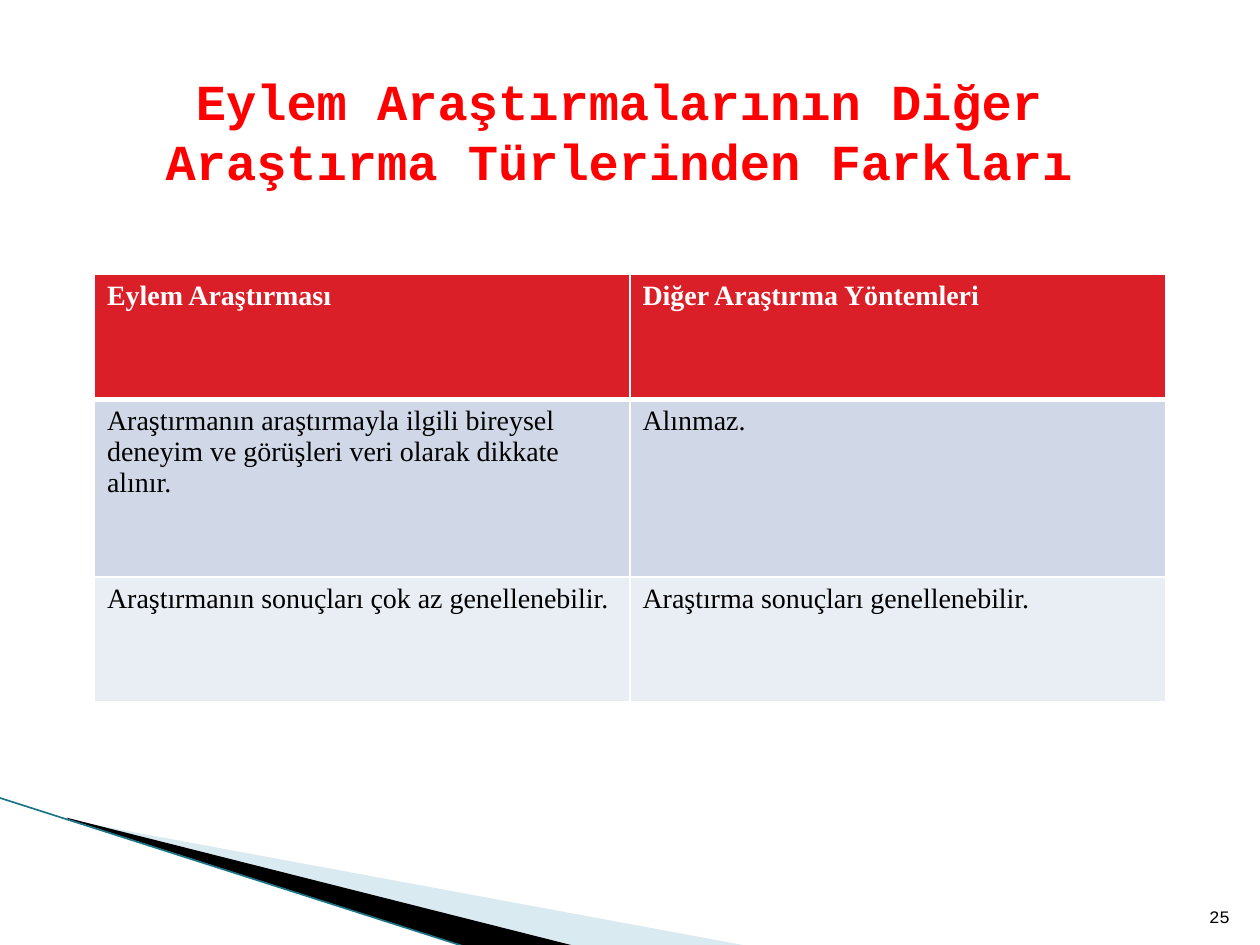
from lxml.etree import SubElement
from pptx import Presentation
from pptx.dml.color import RGBColor
from pptx.enum.shapes import MSO_CONNECTOR
from pptx.enum.text import MSO_ANCHOR, PP_ALIGN
from pptx.oxml import parse_xml
from pptx.oxml.ns import nsdecls, qn
from pptx.util import Inches, Pt

WHITE = RGBColor(0xFF, 0xFF, 0xFF)
BLACK = RGBColor(0, 0, 0)
RED = RGBColor(0xFF, 0, 0)
HEADER_RED = RGBColor(0xDA, 0x1F, 0x28)
BAND_DARK = RGBColor(0xD0, 0xD8, 0xE8)
BAND_LIGHT = RGBColor(0xE9, 0xED, 0xF4)
PALE_BLUE = RGBColor(0xA0, 0xCB, 0xDC)
TEAL = RGBColor(0x1B, 0x75, 0x87)

ROWS = [
    ("Eylem Araştırması", "Diğer Araştırma Yöntemleri"),
    ("Araştırmanın araştırmayla ilgili bireysel deneyim ve görüşleri "
     "veri olarak dikkate alınır.", "Alınmaz."),
    ("Araştırmanın sonuçları çok az genellenebilir.",
     "Araştırma sonuçları genellenebilir."),
]


class SlideBuilder:
    heading_font = "Courier New"
    table_font = "Times New Roman"

    def __init__(self, prs):
        self.s = prs.slides.add_slide(prs.slide_layouts[5])

    def set_text(self, tf, text, font, size, color, bold=False, align=PP_ALIGN.LEFT):
        tf.text = text
        p = tf.paragraphs[0]
        p.alignment = align
        f = p.runs[0].font
        f.name, f.size, f.bold = font, Pt(size), bold
        f.color.rgb = color

    def place(self, sp, left, top, width, height):
        sp.left, sp.top = Inches(left), Inches(top)
        sp.width, sp.height = Inches(width), Inches(height)

    def wedge(self, points, color, opacity=100):
        start, *rest = [(Inches(x), Inches(y)) for x, y in points]
        fb = self.s.shapes.build_freeform(*start)
        fb.add_line_segments(rest, close=True)
        sp = fb.convert_to_shape()
        sp.shadow.inherit = False
        sp.line.fill.background()
        sp.fill.solid()
        sp.fill.fore_color.rgb = color
        if opacity < 100:
            clr = sp._element.spPr.find(qn("a:solidFill") + "/" + qn("a:srgbClr"))
            SubElement(clr, qn("a:alpha"), val=str(opacity * 1000))

    def line(self, x1, y1, x2, y2, color, width):
        c = self.s.shapes.add_connector(
            MSO_CONNECTOR.STRAIGHT, Inches(x1), Inches(y1), Inches(x2), Inches(y2))
        c.line.color.rgb = color
        c.line.width = Pt(width)
        SubElement(c._element.spPr, qn("a:effectLst"))

    def title(self, text, *box):
        sp = self.s.shapes.title
        self.place(sp, *box)
        tf = sp.text_frame
        tf.word_wrap = True
        tf.vertical_anchor = MSO_ANCHOR.MIDDLE
        self.set_text(tf, text, self.heading_font, 28.8, RED, True, PP_ALIGN.CENTER)

    def page_number(self, text, *box):
        sp = self.s.shapes.add_textbox(*map(Inches, box))
        tf = sp.text_frame
        tf.word_wrap = True
        tf.vertical_anchor = MSO_ANCHOR.BOTTOM
        self.set_text(tf, text, self.heading_font, 10, BLACK, align=PP_ALIGN.RIGHT)

    def borders(self, cell, top, bottom):
        tcPr = cell._tc.get_or_add_tcPr()
        widths = {"L": 1, "R": 1, "T": top, "B": bottom}
        for i, (side, width) in enumerate(widths.items()):
            tcPr.insert(i, parse_xml(
                f'<a:ln{side} {nsdecls("a")} w="{Pt(width)}"><a:solidFill>'
                f'<a:srgbClr val="{WHITE}"/></a:solidFill></a:ln{side}>'))

    def table(self, rows, heights, fills, left, top, width):
        shape = self.s.shapes.add_table(
            len(rows), len(rows[0]), Inches(left), Inches(top),
            Inches(width), Inches(sum(heights)))
        tbl = shape.table
        for r, (texts, height, fill) in enumerate(zip(rows, heights, fills)):
            tbl.rows[r].height = Inches(height)
            header = r == 0
            for c, text in enumerate(texts):
                cell = tbl.cell(r, c)
                cell.fill.solid()
                cell.fill.fore_color.rgb = fill
                self.borders(cell, 3 if r == 1 else 1, 3 if header else 1)
                self.set_text(cell.text_frame, text, self.table_font, 16,
                              WHITE if header else BLACK, header)


def main():
    prs = Presentation()
    prs.slide_width, prs.slide_height = Inches(10), Inches(7.5)
    b = SlideBuilder(prs)
    b.wedge([(0.55, 6.51), (5.95, 7.51), (4.56, 7.51), (0.55, 6.5)], PALE_BLUE, 40)
    b.wedge([(0.53, 6.49), (4.57, 7.51), (3.72, 7.52), (0.54, 6.5)], BLACK)
    b.line(-0.01, 6.33, 3.71, 7.52, TEAL, 0.95)
    b.page_number("25", 9.46, 7.01, 0.4, 0.4)
    b.title("Eylem Araştırmalarının Diğer Araştırma Türlerinden Farkları",
            0.83, 0.52, 8.17, 1.03)
    b.table(ROWS, [0.99, 1.41, 0.99], [HEADER_RED, BAND_DARK, BAND_LIGHT],
            0.75, 2.18, 8.5)
    prs.save("out.pptx")


if __name__ == "__main__":
    main()
